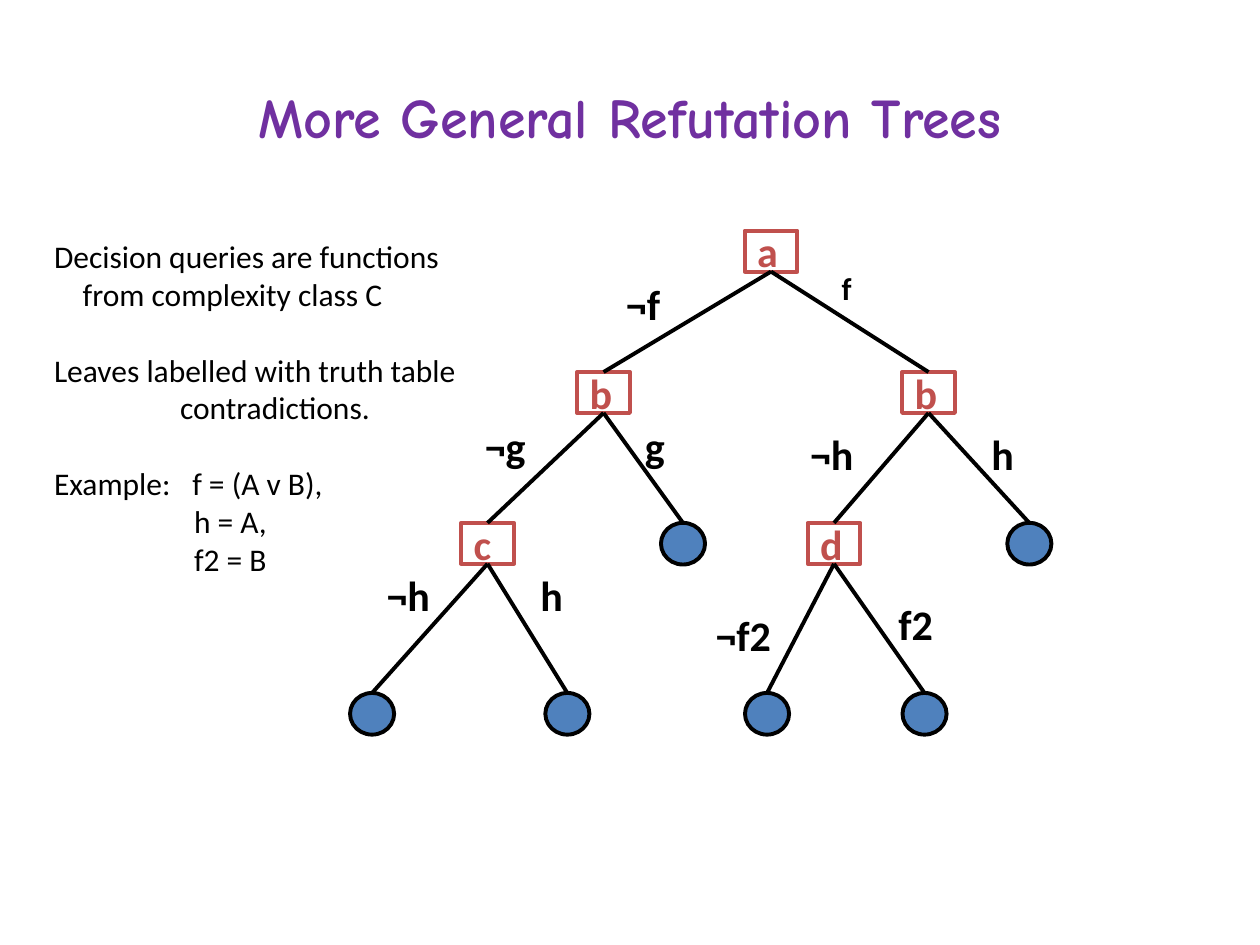
from dataclasses import dataclass

from lxml.etree import SubElement
from pptx import Presentation
from pptx.dml.color import RGBColor
from pptx.enum.shapes import MSO_CONNECTOR, MSO_SHAPE
from pptx.enum.text import MSO_ANCHOR, MSO_AUTO_SIZE, PP_ALIGN
from pptx.oxml.ns import qn
from pptx.util import Pt


@dataclass(frozen=True)
class Theme:
    purple: str = "7030A0"
    red: str = "C0504D"
    blue: str = "4F81BD"
    black: str = "000000"
    white: str = "FFFFFF"
    title_font: str = "Comic Neue"
    body_font: str = "Calibri"
    title_size: int = 32
    label_size: int = 24
    body_size: int = 18
    line_width: float = 2.25


class TreeSlide:
    def __init__(self, presentation, theme):
        self.theme = theme
        self.slide = presentation.slides.add_slide(presentation.slide_layouts[5])

    def add_run(self, paragraph, text, size, color, bold=False, font=None):
        run = paragraph.add_run()
        run.text = text
        run.font.name = font or self.theme.body_font
        run.font.size = Pt(size)
        run.font.bold = bold
        run.font.color.rgb = RGBColor.from_string(color)

    def add_title(self, text):
        title = self.slide.shapes.title
        title.left, title.top, title.width, title.height = Pt(36), Pt(21.6), Pt(648), Pt(90)
        title.text_frame.vertical_anchor = MSO_ANCHOR.MIDDLE
        paragraph = title.text_frame.paragraphs[0]
        paragraph.alignment = PP_ALIGN.CENTER
        theme = self.theme
        self.add_run(paragraph, text, theme.title_size, theme.purple, True, theme.title_font)

    def add_shape(self, kind, center, top, width, height, fill, line):
        shape = self.slide.shapes.add_shape(
            kind, Pt(center - width / 2), Pt(top), Pt(width), Pt(height))
        shape.shadow.inherit = False
        shape.fill.solid()
        shape.fill.fore_color.rgb = RGBColor.from_string(fill)
        shape.line.color.rgb = RGBColor.from_string(line)
        shape.line.width = Pt(self.theme.line_width)
        return shape

    def add_query(self, center, top, name):
        theme = self.theme
        shape = self.add_shape(
            MSO_SHAPE.RECTANGLE, center, top, 30.2, 23.4, theme.white, theme.red)
        shape.text_frame.word_wrap = False
        shape.text_frame.vertical_anchor = MSO_ANCHOR.MIDDLE
        paragraph = shape.text_frame.paragraphs[0]
        paragraph.alignment = PP_ALIGN.LEFT
        self.add_run(paragraph, name, theme.label_size, theme.red, True)
        return shape

    def add_leaf(self, center, top):
        theme = self.theme
        return self.add_shape(MSO_SHAPE.OVAL, center, top, 25.2, 23.8, theme.blue, theme.black)

    def add_branch(self, parent, child):
        connector = self.slide.shapes.add_connector(MSO_CONNECTOR.STRAIGHT, 0, 0, 0, 0)
        connector.begin_connect(parent, 2)
        connector.end_connect(child, 0)
        connector.line.color.rgb = RGBColor.from_string(self.theme.black)
        connector.line.width = Pt(self.theme.line_width)
        SubElement(connector._element.spPr, qn("a:effectLst"))

    def add_text_box(self, left, top, width, height):
        box = self.slide.shapes.add_textbox(Pt(left), Pt(top), Pt(width), Pt(height))
        box.text_frame.word_wrap = False
        box.text_frame.auto_size = MSO_AUTO_SIZE.SHAPE_TO_FIT_TEXT
        return box.text_frame

    def add_label(self, text, left, top, width, size):
        frame = self.add_text_box(left, top, width, size * 1.22 + 7.2)
        frame.vertical_anchor = MSO_ANCHOR.MIDDLE
        self.add_run(frame.paragraphs[0], text, size, self.theme.black, True)

    def add_notes(self, left, top, width, height, lines):
        frame = self.add_text_box(left, top, width, height)
        for index, (text, margin, first_indent, space_before) in enumerate(lines):
            paragraph = frame.add_paragraph() if index else frame.paragraphs[0]
            paragraph.space_before = Pt(space_before)
            properties = paragraph._p.get_or_add_pPr()
            properties.set("marL", str(Pt(margin)))
            properties.set("indent", str(Pt(first_indent)))
            self.add_run(paragraph, text, self.theme.body_size, self.theme.black)


def main():
    presentation = Presentation()
    presentation.slide_width, presentation.slide_height = Pt(720), Pt(540)
    theme = Theme()
    tree = TreeSlide(presentation, theme)
    tree.add_title("More General Refutation Trees")

    level_tops = [131.8, 212.6, 298.8, 396]
    queries = {
        "root": ("a", 440.6, 0),
        "left": ("b", 344.9, 1),
        "right": ("b", 530.6, 1),
        "far left": ("c", 278.6, 2),
        "middle": ("d", 476.6, 2),
    }
    leaves = {
        "leaf g": (390.3, 2),
        "leaf h": (588.2, 2),
        "leaf c not h": (212.6, 3),
        "leaf c h": (324.2, 3),
        "leaf d not f2": (438.3, 3),
        "leaf d f2": (528.3, 3),
    }
    nodes = {key: tree.add_query(center, level_tops[level], name)
             for key, (name, center, level) in queries.items()}
    nodes.update({key: tree.add_leaf(center, level_tops[level])
                  for key, (center, level) in leaves.items()})

    large, small = theme.label_size, theme.body_size
    branches = [
        ("root", "left", "¬f", 350.6, 155.5, 39.6, large),
        ("root", "right", "f", 473.8, 149.8, 20, small),
        ("left", "far left", "¬g", 270, 236.2, 43.2, large),
        ("left", "leaf g", "g", 361.4, 236.2, 25.9, large),
        ("right", "middle", "¬h", 455.8, 241.2, 44.6, large),
        ("right", "leaf h", "h", 559.4, 241.2, 27.4, large),
        ("far left", "leaf c not h", "¬h", 213.8, 321.8, 44.6, large),
        ("far left", "leaf c h", "h", 301.7, 321.8, 27.4, large),
        ("middle", "leaf d not f2", "¬f2", 401.8, 344.2, 51.8, large),
        ("middle", "leaf d f2", "f2", 506.2, 338.4, 34.6, large),
    ]
    for parent, child, *label in branches:
        tree.add_branch(nodes[parent], nodes[child])
        tree.add_label(*label)

    tree.add_notes(23.8, 131.8, 247, 247, [
        ("Decision queries are functions", 0, 0, 0),
        ("from complexity class C", 16.4, 0, 0),
        ("Leaves labelled with truth table", 0, 0, 21.8),
        ("contradictions.", 72, 0, 0),
        ("Example:\tf = (A v B),", 79, -79, 21.8),
        ("h = A,", 80, 0, 0),
        ("f2 = B", 80, 0, 0),
    ])
    presentation.save("out.pptx")


if __name__ == "__main__":
    main()
